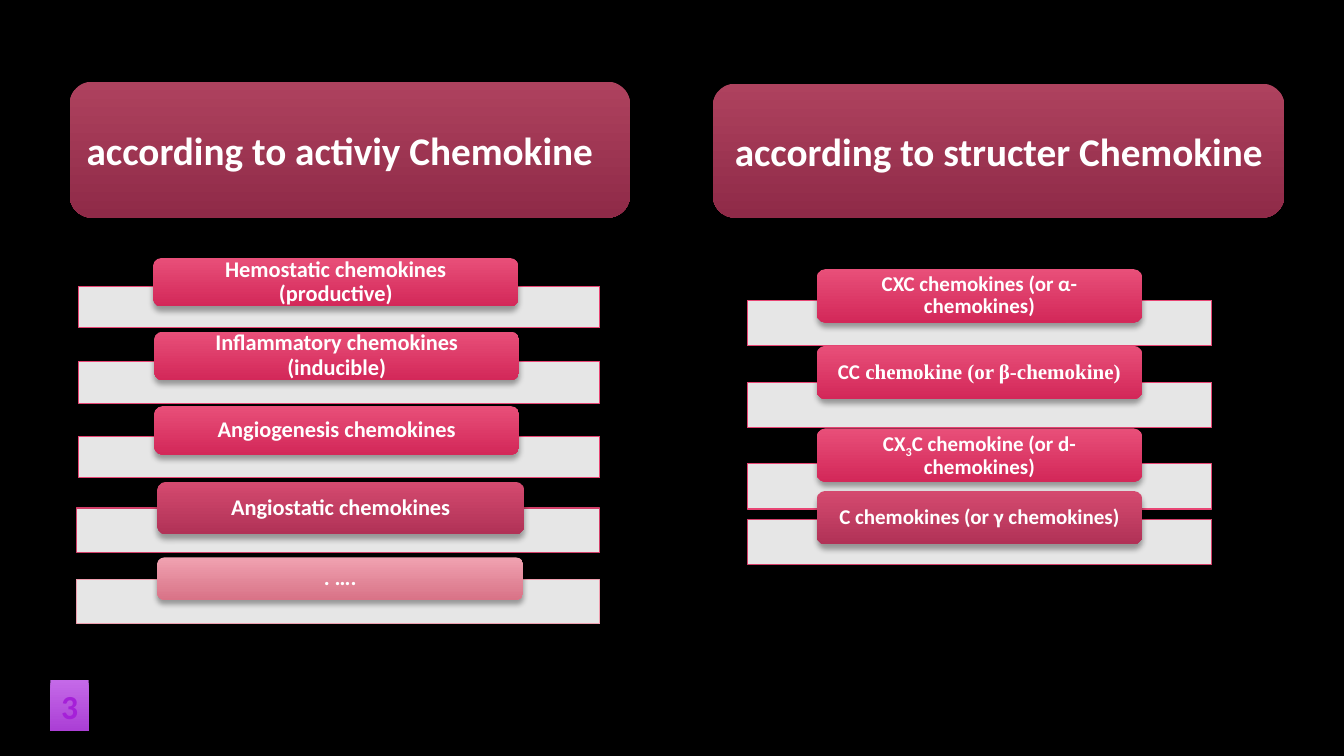
from dataclasses import dataclass

from lxml import etree
from pptx import Presentation
from pptx import util as u
from pptx.dml.color import RGBColor
from pptx.enum import shapes, text
from pptx.oxml import ns

BLACK = RGBColor(0x00, 0x00, 0x00)
WHITE = RGBColor(0xFF, 0xFF, 0xFF)
VIOLET = RGBColor(0xA5, 0x20, 0xD8)


@dataclass(frozen=True)
class Tone:
    top: RGBColor
    bottom: RGBColor
    edge: RGBColor


WINE = Tone(RGBColor(0xAE, 0x42, 0x5E), RGBColor(0x8F, 0x2A, 0x48), BLACK)
PINK = Tone(RGBColor(0xE8, 0x4F, 0x79), RGBColor(0xD3, 0x28, 0x59), RGBColor(0xE8, 0x45, 0x74))
ROSE = Tone(RGBColor(0xD4, 0x4A, 0x6F), RGBColor(0xB1, 0x32, 0x57), RGBColor(0xD3, 0x3F, 0x69))
BLUSH = Tone(RGBColor(0xF0, 0xA2, 0xB1), RGBColor(0xD9, 0x73, 0x87), RGBColor(0xEF, 0x9F, 0xAF))
PURPLE = Tone(RGBColor(0xC4, 0x69, 0xE8), RGBColor(0xAB, 0x3F, 0xD5), BLACK)


@dataclass(frozen=True)
class Area:
    left: float
    top: float
    width: float
    height: float


@dataclass(frozen=True)
class Span:
    words: str
    font: str = "Calibri"
    subscript: bool = False


@dataclass(frozen=True)
class Entry:
    spans: list[Span]
    pill: Area
    bar: Area
    tone: Tone = PINK


@dataclass(frozen=True)
class Header:
    words: str
    area: Area
    right_inset: float = 0.1


HEADERS = [
    Header("according to activiy Chemokine", Area(0.69, 0.81, 5.56, 1.35), 0.3),
    Header("according to structer Chemokine", Area(7.07, 0.83, 5.67, 1.33)),
]

ACTIVITY = [
    Entry([Span("Hemostatic chemokines (productive)")],
          Area(1.52, 2.56, 3.62, 0.48), Area(0.78, 2.84, 5.17, 0.41)),
    Entry([Span("Inflammatory chemokines (inducible)")],
          Area(1.53, 3.29, 3.62, 0.48), Area(0.78, 3.59, 5.17, 0.41)),
    Entry([Span("Angiogenesis chemokines")],
          Area(1.53, 4.03, 3.62, 0.48), Area(0.78, 4.33, 5.17, 0.41)),
    Entry([Span("Angiostatic chemokines")],
          Area(1.56, 4.78, 3.64, 0.52), Area(0.76, 5.04, 5.19, 0.44), ROSE),
    Entry([Span(". ….")],
          Area(1.56, 5.53, 3.63, 0.42), Area(0.76, 5.75, 5.19, 0.44), BLUSH),
]


def structure_entry(spans: list[Span], pill_top: float, bar_top: float, tone: Tone = PINK) -> Entry:
    return Entry(spans, Area(8.1, pill_top, 3.23, 0.53), Area(7.41, bar_top, 4.61, 0.45), tone)


STRUCTURE = [
    structure_entry([Span("CXC chemokines (or α-chemokines)")], 2.67, 2.98),
    structure_entry([Span("CC"), Span(" chemokine (or β-chemokine)", "Times New Roman")], 3.43, 3.79),
    structure_entry([Span("CX"), Span("3", subscript=True), Span("C chemokine (or d-chemokines)")],
                    4.25, 4.6),
    structure_entry([Span("C chemokines (or γ chemokines)")], 4.87, 5.15, ROSE),
]


def add_shadow(box, opacity: int = 35, blur: float = 4) -> None:
    box.shadow.inherit = False
    effects = box._element.spPr.find(ns.qn("a:effectLst"))
    shadow = etree.SubElement(effects, ns.qn("a:outerShdw"), blurRad=str(u.Pt(blur)),
                              dist=str(u.Pt(3)), dir="5400000", rotWithShape="0")
    color = etree.SubElement(shadow, ns.qn("a:srgbClr"), val=str(BLACK))
    etree.SubElement(color, ns.qn("a:alpha"), val=str(opacity * 1000))


def add_box(parent, kind: shapes.MSO_SHAPE, area: Area):
    return parent.add_shape(kind, u.Inches(area.left), u.Inches(area.top),
                            u.Inches(area.width), u.Inches(area.height))


def add_gradient_box(parent, kind: shapes.MSO_SHAPE, area: Area, tone: Tone):
    box = add_box(parent, kind, area)
    box.fill.gradient()
    box.fill.gradient_angle = 270
    for stop, position, color in zip(box.fill.gradient_stops, (0, 1), (tone.top, tone.bottom)):
        stop.position = position
        stop.color.rgb = color
    box.line.fill.background()
    return box


def write(box, spans: list[Span], size: float, color: RGBColor = WHITE, spacing: float = 1.0) -> None:
    frame = box.text_frame
    frame.vertical_anchor = text.MSO_ANCHOR.MIDDLE
    para = frame.paragraphs[0]
    para.alignment = text.PP_ALIGN.CENTER
    para.line_spacing = spacing
    for span in spans:
        run = para.add_run()
        run.text = span.words
        run.font.name = span.font
        run.font.size = u.Pt(size)
        run.font.bold = True
        run.font.color.rgb = color
        if span.subscript:
            run._r.get_or_add_rPr().set("baseline", "-25000")


def add_header(page, header: Header) -> None:
    box = add_gradient_box(page.shapes, shapes.MSO_SHAPE.ROUNDED_RECTANGLE, header.area, WINE)
    add_shadow(box)
    box.text_frame.word_wrap = True
    box.text_frame.margin_right = u.Inches(header.right_inset)
    write(box, [Span(header.words)], 28)


def add_bar(parent, area: Area, edge: RGBColor) -> None:
    bar = add_box(parent, shapes.MSO_SHAPE.RECTANGLE, area)
    bar.fill.solid()
    bar.fill.fore_color.rgb = WHITE
    color = bar._element.spPr.find(ns.qn("a:solidFill"))[0]
    etree.SubElement(color, ns.qn("a:alpha"), val="90000")
    bar.line.color.rgb = edge
    bar.line.width = u.Pt(0.75)
    add_shadow(bar)


def add_list(page, entries: list[Entry], size: float) -> None:
    group = page.shapes.add_group_shape().shapes
    for entry in entries:
        add_bar(group, entry.bar, entry.tone.edge)
        pill = add_gradient_box(group, shapes.MSO_SHAPE.ROUNDED_RECTANGLE, entry.pill, entry.tone)
        add_shadow(pill)
        frame = pill.text_frame
        frame.word_wrap = True
        frame.margin_left = frame.margin_right = u.Inches(0.15)
        frame.margin_top = frame.margin_bottom = 0
        write(pill, entry.spans, size, spacing=0.9)


def add_page_number(page) -> None:
    box = add_gradient_box(page.shapes, shapes.MSO_SHAPE.RECTANGLE, Area(0.5, 6.75, 0.38, 0.5), PURPLE)
    add_shadow(box, opacity=65, blur=5)
    box.text_frame.word_wrap = False
    write(box, [Span("3")], 24, VIOLET)


def main() -> None:
    deck = Presentation()
    deck.slide_width = u.Inches(13.33)
    deck.slide_height = u.Inches(7.5)
    page = deck.slides.add_slide(deck.slide_layouts[6])
    page.background.fill.solid()
    page.background.fill.fore_color.rgb = BLACK
    for header in HEADERS:
        add_header(page, header)
    add_list(page, ACTIVITY, 16)
    add_list(page, STRUCTURE, 15)
    add_page_number(page)
    deck.save("out.pptx")


if __name__ == "__main__":
    main()
